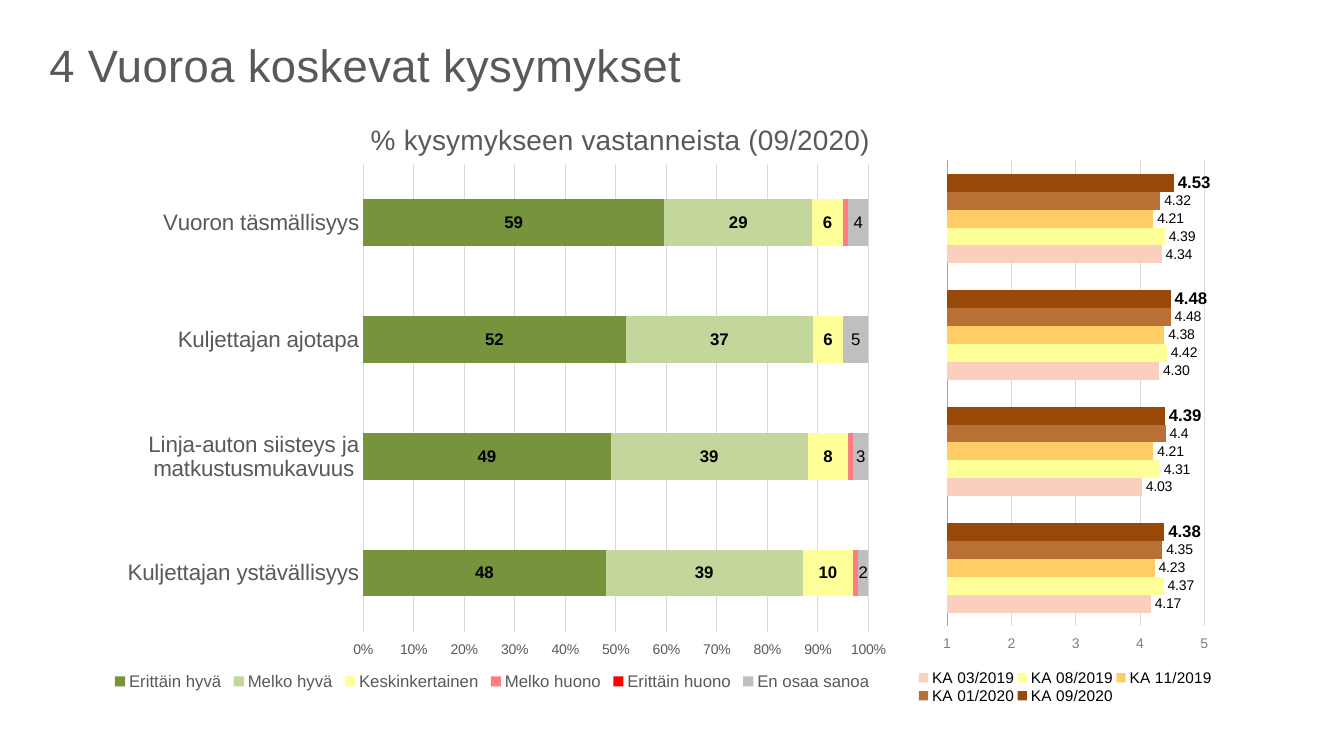
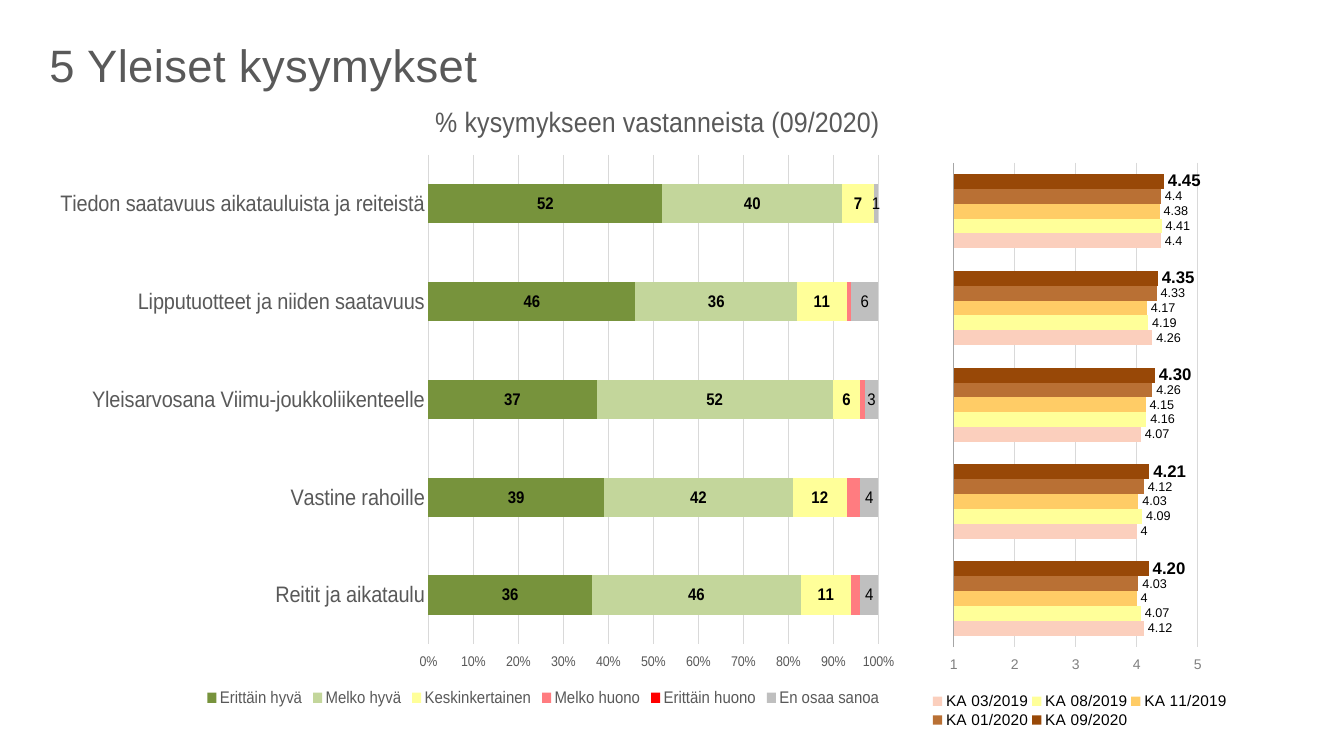
from dataclasses import dataclass

from lxml.etree import SubElement
from pptx import Presentation
from pptx.chart.data import CategoryChartData
from pptx.dml.color import RGBColor
from pptx.enum.chart import (
    XL_CHART_TYPE as ChartType,
    XL_LABEL_POSITION as LabelPosition,
    XL_LEGEND_POSITION as LegendPosition,
    XL_TICK_LABEL_POSITION as TickLabels,
    XL_TICK_MARK as TickMark,
)
from pptx.enum.text import MSO_ANCHOR, MSO_AUTO_SIZE, PP_ALIGN
from pptx.oxml.ns import qn
from pptx.util import Cm, Pt


@dataclass(frozen=True)
class Theme:
    font: str = "Arial"
    text: str = "595959"
    black: str = "000000"
    muted: str = "808080"
    grid: str = "D9D9D9"
    axis: str = "A6A6A6"
    title_size: float = 32.4
    chart_size: int = 18
    chart_title_size: int = 20
    category_size: int = 16
    label_size: int = 12
    mean_legend_size: int = 11
    tick_size: int = 10


THEME = Theme()
CHART_TITLE = "% kysymykseen vastanneista (09/2020)"

# Answer: colour, label weight (None means no label)
ANSWERS = {
    "Erittäin hyvä": ("77933C", True),
    "Melko hyvä": ("C3D69B", True),
    "Keskinkertainen": ("FFFF99", True),
    "Melko huono": ("FF7C80", None),
    "Erittäin huono": ("FF0000", None),
    "En osaa sanoa": ("BFBFBF", False),
}
ROUNDS = {
    "KA 09/2020": "984807",
    "KA 01/2020": "B97034",
    "KA 11/2019": "FFCC66",
    "KA 08/2019": "FFFF99",
    "KA 03/2019": "FBCFBD",
}


def set_layout(element, position, after=None, inner=False):
    """Place a chart part by fractions of the chart: x, y and optionally w, h."""
    for existing in element.findall(qn("c:layout")):
        element.remove(existing)
    layout = SubElement(element, qn("c:layout"))
    index = 0 if after is None else element.index(element.find(qn(after))) + 1
    element.insert(index, layout)
    manual = SubElement(layout, qn("c:manualLayout"))
    if inner:
        SubElement(manual, qn("c:layoutTarget")).set("val", "inner")
    for side in ("x", "y"):
        SubElement(manual, qn(f"c:{side}Mode")).set("val", "edge")
    for side, fraction in zip("xywh", position):
        SubElement(manual, qn(f"c:{side}")).set("val", str(fraction))


class Deck:
    def __init__(self, theme):
        self.theme = theme
        self.presentation = Presentation()
        self.presentation.slide_width = Cm(33.87)
        self.presentation.slide_height = Cm(19.05)
        self.slide = None

    def style_font(self, font, size, color, bold=False):
        font.name = self.theme.font
        font.size = Pt(size)
        font.bold = bold
        font.color.rgb = RGBColor.from_string(color)

    def style_line(self, line, color, width):
        line.color.rgb = RGBColor.from_string(color)
        line.width = Pt(width)

    def add_slide(self, title):
        layout = self.presentation.slide_layouts.get_by_name("Title Only")
        self.slide = self.presentation.slides.add_slide(layout)
        shape = self.slide.shapes.title
        shape.left, shape.top, shape.width, shape.height = (
            Cm(0.99), Cm(0.66), Cm(27.25), Cm(1.8))
        frame = shape.text_frame
        frame.word_wrap = True
        frame.auto_size = MSO_AUTO_SIZE.NONE
        frame.vertical_anchor = MSO_ANCHOR.TOP
        paragraph = frame.paragraphs[0]
        paragraph.alignment = PP_ALIGN.LEFT
        paragraph.line_spacing = 1.1
        run = paragraph.add_run()
        run.text = title
        self.style_font(run.font, self.theme.title_size, self.theme.text)
        run._r.get_or_add_rPr().set("spc", "30")

    def add_bar_chart(self, kind, box, categories, series, plot_box):
        data = CategoryChartData()
        data.categories = categories
        for name, values in series.items():
            data.add_series(name, values)
        chart = self.slide.shapes.add_chart(kind, *map(Cm, box), data).chart
        self.style_font(chart.font, self.theme.chart_size, self.theme.black)
        chart.has_title = False
        plot = chart.plots[0]
        plot.gap_width = 150
        plot.vary_by_categories = False
        set_layout(chart._chartSpace.chart.plotArea, plot_box, inner=True)
        chart.category_axis.reverse_order = True
        chart.category_axis.major_tick_mark = TickMark.NONE
        chart.category_axis.has_major_gridlines = False
        chart.value_axis.has_major_gridlines = True
        chart.value_axis.tick_label_position = TickLabels.HIGH
        chart.value_axis.format.line.fill.background()
        return chart

    def add_legend(self, chart, position, size, color):
        chart.has_legend = True
        legend = chart.legend
        legend.position = LegendPosition.BOTTOM
        legend.include_in_layout = False
        self.style_font(legend.font, size, color)
        set_layout(legend._element, position, after="c:legendPos")

    def fill_series(self, series, color):
        series.format.fill.solid()
        series.format.fill.fore_color.rgb = RGBColor.from_string(color)
        series.invert_if_negative = False

    def label_series(self, series, size, bold, position, number_format):
        labels = series.data_labels
        labels.show_value = True
        labels.position = position
        labels.number_format = number_format
        labels.number_format_is_linked = False
        self.style_font(labels.font, size, self.theme.black, bold)

    def add_answer_chart(self, box, categories, rows, plot_box, title_top, wrap):
        """Add the stacked shares; wrap lets long categories break into lines."""
        theme = self.theme
        chart = self.add_bar_chart(ChartType.BAR_STACKED_100, box, categories,
                                   dict(zip(ANSWERS, rows)), plot_box)
        chart.plots[0].overlap = 100
        chart.has_title = True
        run = chart.chart_title.text_frame.paragraphs[0].add_run()
        run.text = CHART_TITLE
        self.style_font(run.font, theme.chart_title_size, theme.text)
        chart.chart_title.include_in_layout = False
        set_layout(chart.chart_title._element, (0.37, title_top), after="c:tx")

        category_axis, value_axis = chart.category_axis, chart.value_axis
        self.style_font(category_axis.tick_labels.font, theme.category_size, theme.text)
        body = category_axis._element.find(qn("c:txPr")).find(qn("a:bodyPr"))
        body.set("rot", "0" if wrap else "-60000000")
        self.style_line(category_axis.format.line, theme.grid, 0.75)
        self.style_line(value_axis.major_gridlines.format.line, theme.grid, 0.75)
        value_axis.maximum_scale = 1
        value_axis.major_tick_mark = TickMark.OUTSIDE
        value_axis.tick_labels.number_format = "0%"
        value_axis.tick_labels.number_format_is_linked = False
        self.style_font(value_axis.tick_labels.font, theme.tick_size, theme.text)
        self.add_legend(chart, (0.065, 0.925, 0.91, 0.05),
                        theme.label_size, theme.text)
        for series, (color, bold) in zip(chart.plots[0].series, ANSWERS.values()):
            self.fill_series(series, color)
            if bold is not None:
                self.label_series(series, theme.label_size, bold,
                                  LabelPosition.CENTER, "0")

    def add_mean_chart(self, box, rows, plot_box, legend_width, small_size, formats):
        """Add the means per survey round, the latest one in bold."""
        theme = self.theme
        categories = [str(number + 1) for number in range(len(rows[0]))]
        chart = self.add_bar_chart(ChartType.BAR_CLUSTERED, box, categories,
                                   dict(zip(ROUNDS, rows)), plot_box)
        category_axis, value_axis = chart.category_axis, chart.value_axis
        category_axis.tick_label_position = TickLabels.NONE
        self.style_line(category_axis.format.line, theme.axis, 0.75)
        self.style_line(value_axis.major_gridlines.format.line, theme.grid, 0.25)
        value_axis.minimum_scale = 1
        value_axis.maximum_scale = 5
        value_axis.major_unit = 1
        value_axis.major_tick_mark = TickMark.NONE
        self.style_font(value_axis.tick_labels.font, theme.tick_size, theme.muted)
        self.add_legend(chart, (0.015, 0.94, legend_width, 0.06),
                        theme.mean_legend_size, theme.black)
        for index, (series, color) in enumerate(zip(chart.plots[0].series, ROUNDS.values())):
            latest = index == 0
            self.fill_series(series, color)
            self.label_series(series, theme.label_size if latest else small_size, latest,
                              LabelPosition.OUTSIDE_END, formats.get(series.name, "General"))


def main():
    deck = Deck(THEME)
    latest_format = {"KA 09/2020": "#,##0.00"}

    deck.add_slide("4 Vuoroa koskevat kysymykset")
    deck.add_answer_chart(
        (1.35, 2.79, 21.26, 15.14),
        ["Vuoron täsmällisyys", "Kuljettajan ajotapa",
         "Linja-auton siisteys ja matkustusmukavuus", "Kuljettajan ystävällisyys"],
        [(59, 52, 49, 48), (29, 37, 39, 39), (6, 6, 8, 10),
         (1, 0, 1, 1), (0, 0, 0, 0), (4, 5, 3, 2)],
        (0.367, 0.089, 0.599, 0.778), title_top=0.01, wrap=True)
    deck.add_mean_chart(
        (22.94, 2.62, 8.99, 15.14),
        [(4.53, 4.48, 4.39, 4.38), (4.32, 4.48, 4.4, 4.35), (4.21, 4.38, 4.21, 4.23),
         (4.39, 4.42, 4.31, 4.37), (4.34, 4.3, 4.03, 4.17)],
        (0.103, 0.094, 0.721, 0.775), legend_width=0.84, small_size=10,
        formats={**latest_format, "KA 03/2019": "0.00"})

    deck.add_slide("5 Yleiset kysymykset")
    deck.add_answer_chart(
        (1.52, 2.26, 21.26, 16.13),
        ["Tiedon saatavuus aikatauluista ja reiteistä", "Lipputuotteet ja niiden saatavuus",
         "Yleisarvosana Viimu-joukkoliikenteelle", "Vastine rahoille", "Reitit ja aikataulu"],
        [(52, 46, 37, 39, 36), (40, 36, 52, 42, 46), (7, 11, 6, 12, 11),
         (0, 1, 1, 3, 2), (0, 0, 0, 0, 0), (1, 6, 3, 4, 4)],
        (0.367, 0.102, 0.599, 0.764), title_top=0.015, wrap=False)
    deck.add_mean_chart(
        (23.29, 2.26, 8.53, 16.13),
        [(4.45, 4.35, 4.3, 4.21, 4.2), (4.4, 4.33, 4.26, 4.12, 4.03),
         (4.38, 4.17, 4.15, 4.03, 4), (4.41, 4.19, 4.16, 4.09, 4.07),
         (4.4, 4.26, 4.07, 4, 4.12)],
        (0.087, 0.114, 0.721, 0.757), legend_width=0.89, small_size=9,
        formats=latest_format)

    deck.presentation.save("out.pptx")


if __name__ == "__main__":
    main()
